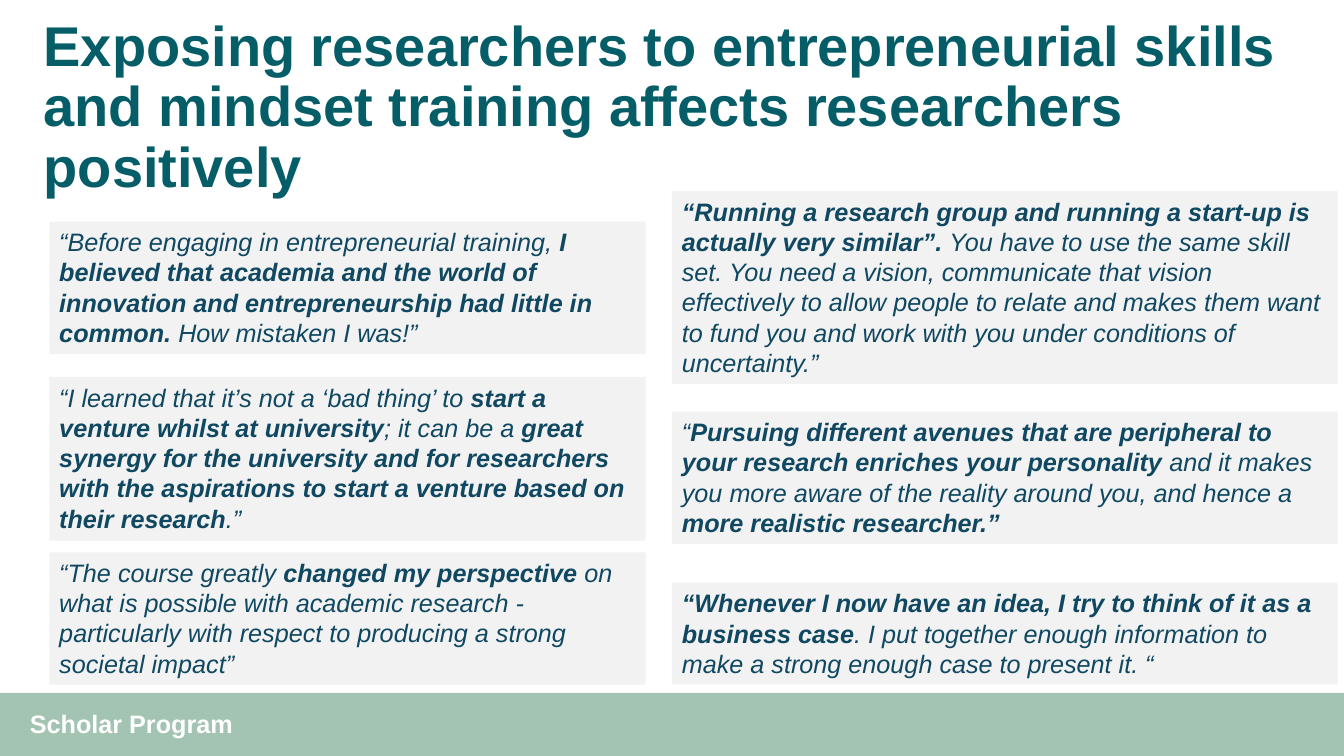
from lxml import etree
from pptx import Presentation
from pptx import util as u
from pptx.dml.color import RGBColor
from pptx.enum import shapes, text
from pptx.oxml.ns import qn

PX = 9525  # 96 px to the inch
THEME = {
    "font": "Arial",
    "title": {"size": 40, "color": "055D67"},
    "quote": {"size": 18, "color": "104862"},
    "foot": {"size": 18, "color": "FFFFFF"},
    "card": "F2F2F2",
    "bar": "85AF9A",
}


def write(para, words, style, **look):
    """Add words as runs; parts between asterisks are bold."""
    for i, part in enumerate(words.split("*")):
        if not part:
            continue
        run = para.add_run()
        run.text = part
        style_set = {"name": THEME["font"], "size": u.Pt(style["size"]), "bold": i % 2 == 1}
        for key, val in {**style_set, **look}.items():
            setattr(run.font, key, val)
        run.font.color.rgb = RGBColor.from_string(style["color"])


def block(x, y, w, h, color):
    """Add a plain filled rectangle without line or shadow."""
    box = slide.shapes.add_shape(
        shapes.MSO_SHAPE.RECTANGLE, *[n * PX for n in (x, y, w, h)])
    box.shadow.inherit = False
    box.fill.solid()
    box.fill.fore_color.rgb = RGBColor.from_string(color)
    box.line.fill.background()
    return box


deck = Presentation()
deck.slide_width, deck.slide_height = 1280 * PX, 720 * PX
slide = deck.slides.add_slide(deck.slide_layouts[5])

# Footer band
bar = block(0, 660, 1280, 60, THEME["bar"])
tint = bar.fill._xPr.find(".//" + qn("a:srgbClr"))
etree.SubElement(tint, qn("a:alpha"), val="75000")
foot = slide.shapes.add_textbox(*[n * PX for n in (19, 670, 254, 38)])
foot.text_frame.word_wrap = True
write(foot.text_frame.paragraphs[0], "*Scholar Program*", THEME["foot"])

# Title
title = slide.shapes.title
place = {"left": 32, "top": 34, "width": 1241, "height": 139}
for key, val in place.items():
    setattr(title, key, val * PX)
frame = title.text_frame
frame.word_wrap = True
frame.auto_size = text.MSO_AUTO_SIZE.NONE
frame.vertical_anchor = text.MSO_ANCHOR.MIDDLE
para = frame.paragraphs[0]
para.alignment = text.PP_ALIGN.LEFT
para.line_spacing = 0.9
write(para, "*Exposing researchers to entrepreneurial skills and mindset training "
      "affects researchers positively*", THEME["title"])

# Quotes: each column is (left, width, [(top, height, words)])
columns = [
    (47, 568, [
        (211, 126, "“Before engaging in entrepreneurial training, *I believed that academia "
         "and the world of innovation and entrepreneurship had little in common. *"
         "How mistaken I was!”"),
        (359, 156, "“I learned that it’s not a ‘bad thing’ to *start a venture whilst at "
         "university*; it can be a *great synergy for the university and for researchers "
         "with the aspirations to start a venture based on their research*.”"),
        (526, 126, "“The course greatly *changed my perspective *on what is possible with "
         "academic research - particularly with respect to producing a strong "
         "societal impact”"),
    ]),
    (640, 634, [
        (182, 184, "*“Running a research group and running a start-up is actually very "
         "similar”. *You have to use the same skill set. You need a vision, communicate "
         "that vision effectively to allow people to relate and makes them want to fund "
         "you and work with you under conditions of uncertainty.”"),
        (392, 126, "“*Pursuing different avenues that are peripheral to your research "
         "enriches your personality *and it makes you more aware of the reality around "
         "you, and hence a *more realistic researcher.”*"),
        (555, 97, "*“Whenever I now have an idea, I try to think of it as a business "
         "case*. I put together enough information to make a strong enough case to "
         "present it. “"),
    ]),
]
for left, width, quotes in columns:
    for top, height, words in quotes:
        frame = block(left, top, width, height, THEME["card"]).text_frame
        frame.word_wrap = True
        frame.vertical_anchor = text.MSO_ANCHOR.TOP
        para = frame.paragraphs[0]
        para.alignment = text.PP_ALIGN.LEFT
        write(para, words, THEME["quote"], italic=True)

deck.save("out.pptx")
